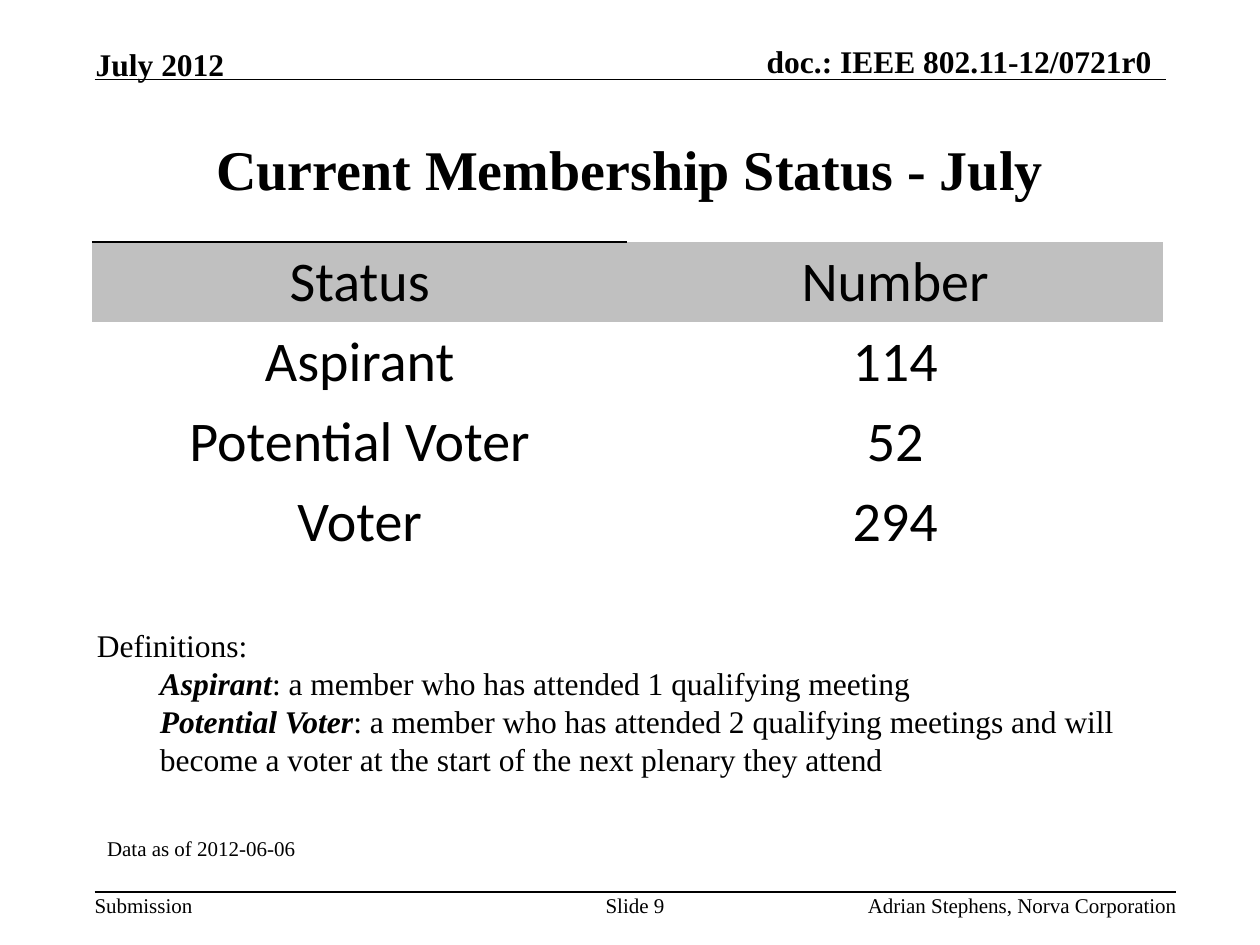
from lxml import etree
from pptx import Presentation
from pptx.dml.color import RGBColor
from pptx.enum import shapes, text
from pptx.oxml import ns
from pptx.util import Inches, Pt

COLORS = {"ink": "000000", "header": "C0C0C0", "paper": "FFFFFF"}
SERIF, SANS = "Times New Roman", "Calibri"
LEFT, CENTER, RIGHT = text.PP_ALIGN.LEFT, text.PP_ALIGN.CENTER, text.PP_ALIGN.RIGHT
TOP, MIDDLE, BOTTOM = text.MSO_ANCHOR.TOP, text.MSO_ANCHOR.MIDDLE, text.MSO_ANCHOR.BOTTOM
NO_STYLE = "{2D5ABB26-0587-4C30-8999-92F81FD0307C}"

# wording, (left, top, width, height), size, bold, alignment, anchor
LABELS = [
    ("doc.: IEEE 802.11-12/0721r0", (5.42, 0.33, 3.72, 0.3), 18, True, RIGHT, BOTTOM),
    ("July 2012", (0.76, 0.36, 1.03, 0.3), 18, True, LEFT, BOTTOM),
    ("Current Membership Status - July", (0.75, 0.75, 8.5, 1.17), 32, True, CENTER, MIDDLE),
    ("Data as of 2012-06-06", (0.85, 6.63, 8.3, 0.2), 12, False, LEFT, TOP),
    ("Submission", (0.75, 7.08, 0.78, 0.2), 12, False, LEFT, TOP),
    ("Slide 9", (4.75, 7.08, 0.58, 0.2), 12, False, CENTER, TOP),
    ("Adrian Stephens, Norva Corporation", (6.34, 7.08, 3, 0.2), 12, False, RIGHT, TOP),
]
RULES = [(0.75, 9.25, 0.63), (0.75, 9.33, 7.08)]  # left, right, height on the slide

MEMBERSHIP = [
    ("Status", "Number"),
    ("Aspirant", "114"),
    ("Potential Voter", "52"),
    ("Voter", "294"),
]
TABLE_BOX = (0.73, 1.92, 8.5, 2.53)

DEFINITIONS = [
    ("Aspirant", ": a member who has attended 1 qualifying meeting"),
    ("Potential Voter", ": a member who has attended 2 qualifying meetings and will "
                        "become a voter at the start of the next plenary they attend"),
]
DEFINITIONS_BOX = (0.77, 4.97, 8.3, 1.21)


def inches(box):
    return [Inches(length) for length in box]


def add_run(paragraph, words, size, font=SERIF, bold=False, italic=False):
    run = paragraph.add_run()
    run.text = words
    run.font.size, run.font.name = Pt(size), font
    run.font.bold, run.font.italic = bold, italic
    run.font.color.rgb = RGBColor.from_string(COLORS["ink"])


def add_frame(slide, box, anchor=TOP):
    """Add a wrapping text box without margins and return its text frame."""
    frame = slide.shapes.add_textbox(*inches(box)).text_frame
    frame.word_wrap = True
    frame.vertical_anchor = anchor
    frame.margin_left = frame.margin_right = frame.margin_top = frame.margin_bottom = 0
    return frame


def add_rule(slide, left, right, height):
    rule = slide.shapes.add_connector(
        shapes.MSO_CONNECTOR.STRAIGHT, *inches((left, height, right, height)))
    rule.line.color.rgb = RGBColor.from_string(COLORS["ink"])
    rule.line.width = Pt(1)
    etree.SubElement(rule._element.spPr, ns.qn("a:effectLst"))


def add_top_border(cell):
    border = etree.Element(ns.qn("a:lnT"), w=str(Pt(1)))
    fill = etree.SubElement(border, ns.qn("a:solidFill"))
    etree.SubElement(fill, ns.qn("a:srgbClr"), val=COLORS["ink"])
    cell._tc.get_or_add_tcPr().insert(0, border)


def add_membership_table(slide):
    table = slide.shapes.add_table(
        len(MEMBERSHIP), len(MEMBERSHIP[0]), *inches(TABLE_BOX)).table
    table.first_row = table.horz_banding = False
    table._tbl.tblPr.find(ns.qn("a:tableStyleId")).text = NO_STYLE
    for row, entries in enumerate(MEMBERSHIP):
        for column, entry in enumerate(entries):
            cell = table.cell(row, column)
            cell.vertical_anchor = TOP if row else MIDDLE
            cell.fill.solid()
            cell.fill.fore_color.rgb = RGBColor.from_string(
                COLORS["paper" if row else "header"])
            paragraph = cell.text_frame.paragraphs[0]
            paragraph.alignment = CENTER
            add_run(paragraph, entry, 32, SANS)
    add_top_border(table.cell(0, 0))


def add_definitions(slide):
    frame = add_frame(slide, DEFINITIONS_BOX)
    add_run(frame.paragraphs[0], "Definitions:", 18)
    for term, meaning in DEFINITIONS:
        paragraph = frame.add_paragraph()
        paragraph.level = 1
        properties = paragraph._p.get_or_add_pPr()
        properties.set("marL", str(Inches(0.5)))
        properties.set("indent", "0")
        add_run(paragraph, term, 18, bold=True, italic=True)
        add_run(paragraph, meaning, 18)


def main():
    deck = Presentation()
    deck.slide_width, deck.slide_height = Inches(10), Inches(7.5)
    slide = deck.slides.add_slide(deck.slide_layouts[6])
    for rule in RULES:
        add_rule(slide, *rule)
    for words, box, size, bold, alignment, anchor in LABELS:
        paragraph = add_frame(slide, box, anchor).paragraphs[0]
        paragraph.alignment = alignment
        add_run(paragraph, words, size, bold=bold)
    add_definitions(slide)
    add_membership_table(slide)
    deck.save("out.pptx")


if __name__ == "__main__":
    main()
